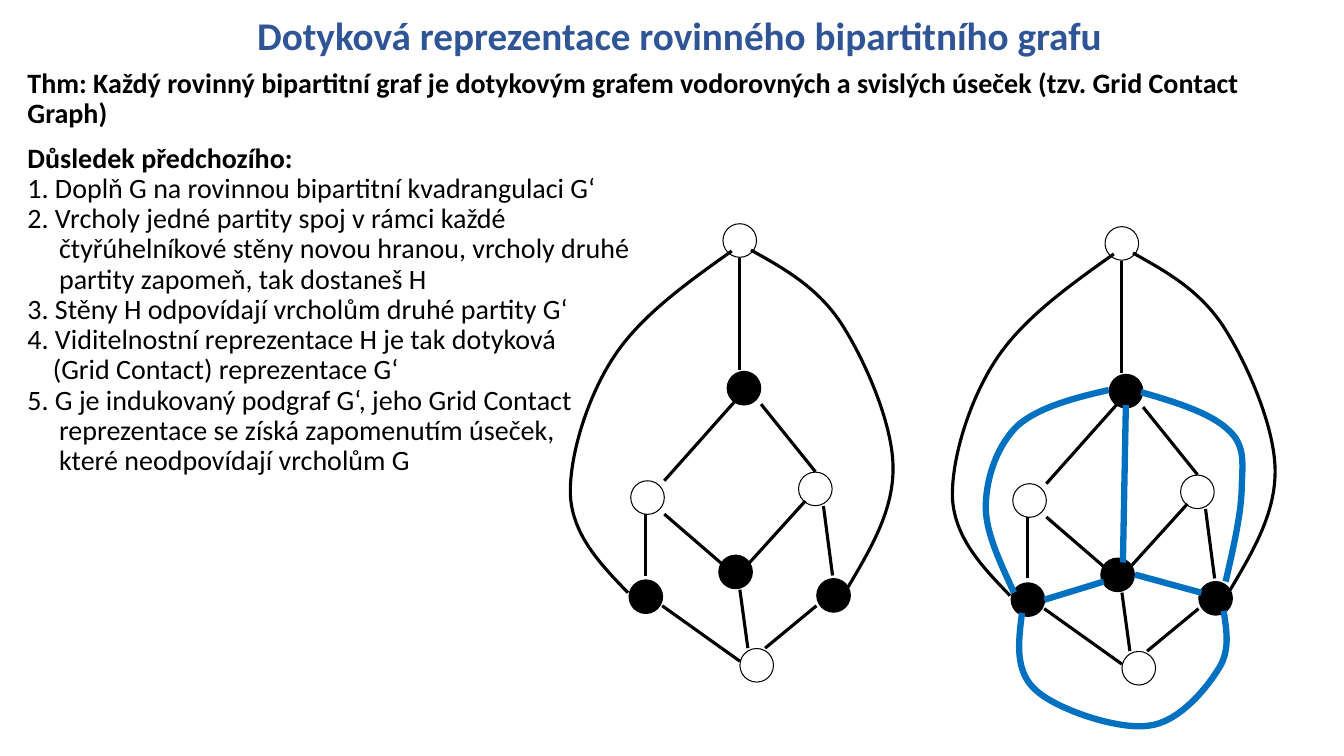
"""Slide on contact representations of planar bipartite graphs."""
from dataclasses import dataclass

from lxml.etree import SubElement
from pptx import Presentation
from pptx.dml.color import RGBColor
from pptx.enum.shapes import MSO_CONNECTOR, MSO_SHAPE
from pptx.enum.text import MSO_ANCHOR, PP_ALIGN
from pptx.oxml.ns import qn
from pptx.slide import Slide
from pptx.text.text import TextFrame
from pptx.util import Pt

Point = tuple[float, float]


@dataclass(frozen=True)
class Theme:
    """Colours, type sizes and line widths."""
    font: str = "Calibri"
    title: RGBColor = RGBColor(0x2F, 0x55, 0x97)
    black: RGBColor = RGBColor(0, 0, 0)
    white: RGBColor = RGBColor(255, 255, 255)
    blue: RGBColor = RGBColor(0, 0x70, 0xC0)
    title_size: float = 28
    body_size: float = 20
    outline: float = 0.75
    edge: float = 2.25
    new_edge: float = 4.5


@dataclass(frozen=True)
class Line:
    """One paragraph of text."""
    text: str
    bold: bool = False
    before: float = 0
    indent: float = 0


@dataclass(frozen=True)
class Vertex:
    """A graph vertex by its left and top."""
    left: float
    top: float
    dark: bool


@dataclass(frozen=True)
class Edge:
    """A straight edge between two points."""
    start: Point
    end: Point


@dataclass(frozen=True)
class Curve:
    """A chain of cubic curves by its control points."""
    points: tuple[Point, ...]


THEME = Theme()
DIAMETER = 24
GRAPH_SHIFTS: list[Point] = [(0, 0), (272.9, 2.1)]

TITLE = [Line("Dotyková reprezentace rovinného bipartitního grafu", bold=True)]
BODY = [
    Line("Thm: Každý rovinný bipartitní graf je dotykovým grafem vodorovných a svislých úseček "
         "(tzv. Grid Contact Graph)", bold=True, before=10),
    Line("Důsledek předchozího:", bold=True, before=10),
    Line("1. Doplň G na rovinnou bipartitní kvadrangulaci G‘"),
    Line("2. Vrcholy jedné partity spoj v rámci každé"),
    Line("čtyřúhelníkové stěny novou hranou, vrcholy druhé", indent=22.6),
    Line("partity zapomeň, tak dostaneš H", indent=22.6),
    Line("3. Stěny H odpovídají vrcholům druhé partity G‘"),
    Line("4. Viditelnostní reprezentace H je tak dotyková"),
    Line("(Grid Contact) reprezentace G‘", indent=18.1),
    Line("5. G je indukovaný podgraf G‘, jeho Grid Contact"),
    Line("reprezentace se získá zapomenutím úseček,", indent=22.6),
    Line("které neodpovídají vrcholům G", indent=22.6),
]
VERTICES = [
    Vertex(516.4, 159.8, False), Vertex(519.4, 265.3, True),
    Vertex(450.5, 343.4, False), Vertex(570.4, 337.2, False),
    Vertex(513.4, 396.5, True), Vertex(449.3, 414.2, True),
    Vertex(583.4, 413.3, True), Vertex(528.5, 463.2, False),
]
EDGES = [
    Edge((474.5, 367.2), (516.2, 403.2)), Edge((528.5, 421.2), (534.2, 463)),
    Edge((534.2, 403.2), (575.3, 357.8)), Edge((546.5, 463), (583.2, 432.7)),
    Edge((528.5, 264.2), (528.5, 184.3)), Edge((543.6, 288.7), (582.5, 337)),
    Edge((588.2, 361.4), (594.7, 411.1)), Edge((527, 284.4), (474.5, 343.4)),
    Edge((460.8, 411.1), (460.8, 367.2)), Edge((473, 432.7), (528.5, 472.3)),
]
CURVES = [
    Curve(((536.4, 178.6), (559.4, 191.5), (583.2, 204.5), (600.5, 230.4), (617, 255.6),
           (637.2, 301), (637.9, 332.6), (638.6, 364.3), (622.1, 391.7), (605.5, 419.8))),
    Curve(((522.7, 179.3), (490.3, 202.3), (457.2, 226.1), (438.5, 254.9), (419, 284.4),
           (406.1, 327.6), (407.5, 355), (409.7, 383), (429.1, 403.2), (448.6, 423.4))),
]
NEW_EDGES = [
    Edge((804.2, 289.4), (802.1, 401.8)),
    Edge((810.7, 410.4), (858.2, 423.4)),
    Edge((745.9, 428.4), (788.4, 415.4)),
]
NEW_CURVES = [
    Curve(((792, 278.6), (766.8, 284.4), (742.3, 290.9), (727.2, 303.8), (712.8, 317.5),
           (704.9, 339.8), (704.2, 360), (703.4, 379.4), (714.2, 401), (724.3, 423.4))),
    Curve(((815, 280.1), (840.2, 287.3), (864.7, 295.2), (877, 306.7), (889.2, 317.5),
           (887.8, 329), (887, 347), (887, 365), (881.3, 390.2), (875.5, 415.4))),
    Curve(((730.1, 437.8), (727.2, 459.4), (725, 480.2), (740.2, 493.2), (755.3, 506.9),
           (798.5, 521.3), (820.1, 518.4), (841.7, 516.2), (861.1, 492.5), (869.8, 478.8),
           (879.1, 465.1), (876.2, 450.7), (874.1, 436.3))),
]


def add_text(page: Slide, frame: tuple[float, float, float, float], lines: list[Line],
             size: float, color: RGBColor) -> TextFrame:
    """Write lines into a wrapping text box."""
    box = page.shapes.add_textbox(*map(Pt, frame)).text_frame
    box.word_wrap = True
    for index, line in enumerate(lines):
        para = box.add_paragraph() if index else box.paragraphs[0]
        para.text = line.text
        para.line_spacing = 0.9
        para.space_before = Pt(line.before)
        para.font.name = THEME.font
        para.font.size = Pt(size)
        para.font.bold = line.bold
        para.font.color.rgb = color
        if line.indent:
            para._p.get_or_add_pPr().set("marL", str(Pt(line.indent)))
    return box


def add_vertex(page: Slide, vertex: Vertex, shift: Point) -> None:
    """Draw a vertex as a circle."""
    circle = page.shapes.add_shape(
        MSO_SHAPE.OVAL, Pt(vertex.left + shift[0]), Pt(vertex.top + shift[1]),
        Pt(DIAMETER), Pt(DIAMETER))
    circle.shadow.inherit = False
    circle.fill.solid()
    circle.fill.fore_color.rgb = THEME.black if vertex.dark else THEME.white
    circle.line.color.rgb = THEME.black
    circle.line.width = Pt(THEME.outline)


def add_edge(page: Slide, edge: Edge, shift: Point, color: RGBColor, width: float) -> None:
    """Draw a straight edge."""
    ends = [Pt(value + move) for point in (edge.start, edge.end)
            for value, move in zip(point, shift)]
    connector = page.shapes.add_connector(MSO_CONNECTOR.STRAIGHT, *ends)
    connector.line.color.rgb = color
    connector.line.width = Pt(width)
    SubElement(connector._element.spPr, qn("a:effectLst"))


def add_curve(page: Slide, curve: Curve, shift: Point, color: RGBColor, width: float) -> None:
    """Draw a curved edge, turning each three segments into one cubic curve."""
    start, *controls = [(Pt(x + shift[0]), Pt(y + shift[1])) for x, y in curve.points]
    builder = page.shapes.build_freeform(*start)
    builder.add_line_segments(controls, close=False)
    outline = builder.convert_to_shape()
    segments = list(outline._element.iter(qn("a:lnTo")))
    for first in range(0, len(segments), 3):
        cubic = SubElement(segments[first].getparent(), qn("a:cubicBezTo"))
        for segment in segments[first:first + 3]:
            cubic.append(segment[0])
            segment.getparent().remove(segment)
    outline.shadow.inherit = False
    outline.fill.background()
    outline.line.color.rgb = color
    outline.line.width = Pt(width)


def add_edges(page: Slide, edges: list[Edge], curves: list[Curve], shift: Point,
              color: RGBColor, width: float) -> None:
    """Draw straight and curved edges in one style."""
    for edge in edges:
        add_edge(page, edge, shift, color, width)
    for curve in curves:
        add_curve(page, curve, shift, color, width)


def main() -> None:
    """Build and save the deck."""
    deck = Presentation()
    deck.slide_width, deck.slide_height = Pt(960), Pt(540)
    page = deck.slides.add_slide(deck.slide_layouts[6])
    title = add_text(page, (125.3, 1.8, 720, 43.7), TITLE, THEME.title_size, THEME.title)
    title.vertical_anchor = MSO_ANCHOR.BOTTOM
    title.paragraphs[0].alignment = PP_ALIGN.CENTER
    add_text(page, (12.5, 46.1, 935.3, 483.8), BODY, THEME.body_size, THEME.black)
    for shift in GRAPH_SHIFTS:
        for vertex in VERTICES:
            add_vertex(page, vertex, shift)
        add_edges(page, EDGES, CURVES, shift, THEME.black, THEME.edge)
    add_edges(page, NEW_EDGES, NEW_CURVES, (0, 0), THEME.blue, THEME.new_edge)
    deck.save("out.pptx")


if __name__ == "__main__":
    main()
